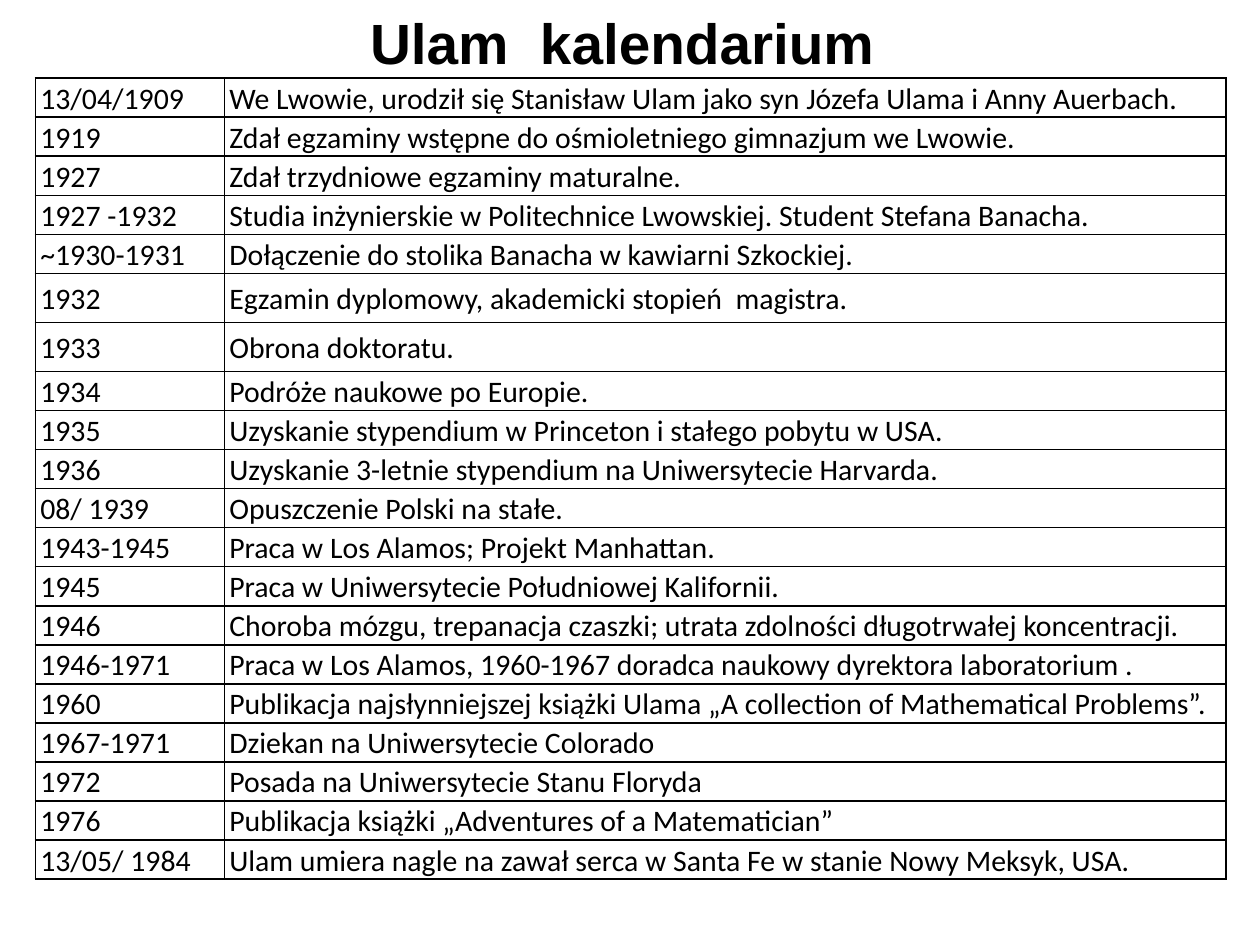
from lxml import etree
from pptx import Presentation
from pptx import util as u
from pptx.dml.color import RGBColor
from pptx.enum import text
from pptx.oxml.ns import qn

BLACK = "000000"
TALL_YEARS = ("1932", "1933")
EVENTS = [
    ("13/04/1909", "We Lwowie, urodził się Stanisław Ulam jako syn Józefa Ulama i Anny Auerbach."),
    ("1919", "Zdał egzaminy wstępne do ośmioletniego gimnazjum we Lwowie."),
    ("1927", "Zdał trzydniowe egzaminy maturalne."),
    ("1927 -1932", "Studia inżynierskie w Politechnice Lwowskiej. Student Stefana Banacha."),
    ("~1930-1931", "Dołączenie do stolika Banacha w kawiarni Szkockiej."),
    ("1932", "Egzamin dyplomowy, akademicki stopień  magistra."),
    ("1933", "Obrona doktoratu."),
    ("1934", "Podróże naukowe po Europie."),
    ("1935", "Uzyskanie stypendium w Princeton i stałego pobytu w USA."),
    ("1936", "Uzyskanie 3-letnie stypendium na Uniwersytecie Harvarda."),
    ("08/ 1939", "Opuszczenie Polski na stałe."),
    ("1943-1945", "Praca w Los Alamos; Projekt Manhattan."),
    ("1945", "Praca w Uniwersytecie Południowej Kalifornii."),
    ("1946", "Choroba mózgu, trepanacja czaszki; utrata zdolności długotrwałej koncentracji."),
    ("1946-1971", "Praca w Los Alamos, 1960-1967 doradca naukowy dyrektora laboratorium ."),
    ("1960", "Publikacja najsłynniejszej książki Ulama „A collection of Mathematical Problems”."),
    ("1967-1971", "Dziekan na Uniwersytecie Colorado"),
    ("1972", "Posada na Uniwersytecie Stanu Floryda"),
    ("1976", "Publikacja książki „Adventures of a Matematician”"),
    ("13/05/ 1984", "Ulam umiera nagle na zawał serca w Santa Fe w stanie Nowy Meksyk, USA."),
]


def color(hex_string):
    return RGBColor.from_string(hex_string)


class CalendarSlide:
    title_font, title_size = "Arial", 32.4
    cell_font, cell_size = "Calibri", 17
    ink = BLACK
    border_width = 1

    def __init__(self, deck):
        self.slide = deck.slides.add_slide(deck.slide_layouts[5])

    def style(self, paragraph, name, size, bold=False):
        font = paragraph.font
        font.name, font.size, font.bold = name, u.Pt(size), bold
        font.color.rgb = color(self.ink)

    def title(self, wording, left, top, width, height):
        heading = self.slide.shapes.title
        heading.left, heading.top = u.Inches(left), u.Inches(top)
        heading.width, heading.height = u.Inches(width), u.Inches(height)
        frame = heading.text_frame
        frame.text = wording
        frame.auto_size = text.MSO_AUTO_SIZE.NONE
        frame.vertical_anchor = text.MSO_ANCHOR.MIDDLE
        frame.paragraphs[0].alignment = text.PP_ALIGN.CENTER
        self.style(frame.paragraphs[0], self.title_font, self.title_size, bold=True)

    def table(self, rows, left, top, widths, heights):
        table = self.slide.shapes.add_table(
            len(rows), len(widths), u.Inches(left), u.Inches(top),
            u.Inches(sum(widths)), u.Inches(sum(heights))).table
        table.first_row = table.horz_banding = False
        for column, width in zip(table.columns, widths):
            column.width = u.Inches(width)
        for row, height, entries in zip(table.rows, heights, rows):
            row.height = u.Inches(height)
            for cell, entry in zip(row.cells, entries):
                self.cell(cell, entry)

    def cell(self, cell, entry):
        cell.text = entry
        cell.vertical_anchor = text.MSO_ANCHOR.MIDDLE
        cell.margin_left = cell.margin_right = u.Inches(0.04)
        cell.margin_top = cell.margin_bottom = 0
        paragraph = cell.text_frame.paragraphs[0]
        paragraph.line_spacing = 1.07
        self.style(paragraph, self.cell_font, self.cell_size)
        self.borders(cell)
        cell.fill.background()

    def borders(self, cell):
        properties = cell._tc.get_or_add_tcPr()
        for side in ("a:lnL", "a:lnR", "a:lnT", "a:lnB"):
            line = etree.SubElement(properties, qn(side), w=str(u.Pt(self.border_width)))
            fill = etree.SubElement(line, qn("a:solidFill"))
            etree.SubElement(fill, qn("a:srgbClr"), val=self.ink)


def main():
    deck = Presentation()
    deck.slide_width, deck.slide_height = u.Inches(10), u.Inches(7.5)
    calendar = CalendarSlide(deck)
    calendar.title("Ulam  kalendarium ", 0, 0, 10, 0.67)
    heights = [0.39 if year in TALL_YEARS else 0.31 for year, _ in EVENTS]
    calendar.table(EVENTS, 0.28, 0.62, (1.5, 7.95), heights)
    deck.save("out.pptx")


if __name__ == "__main__":
    main()
